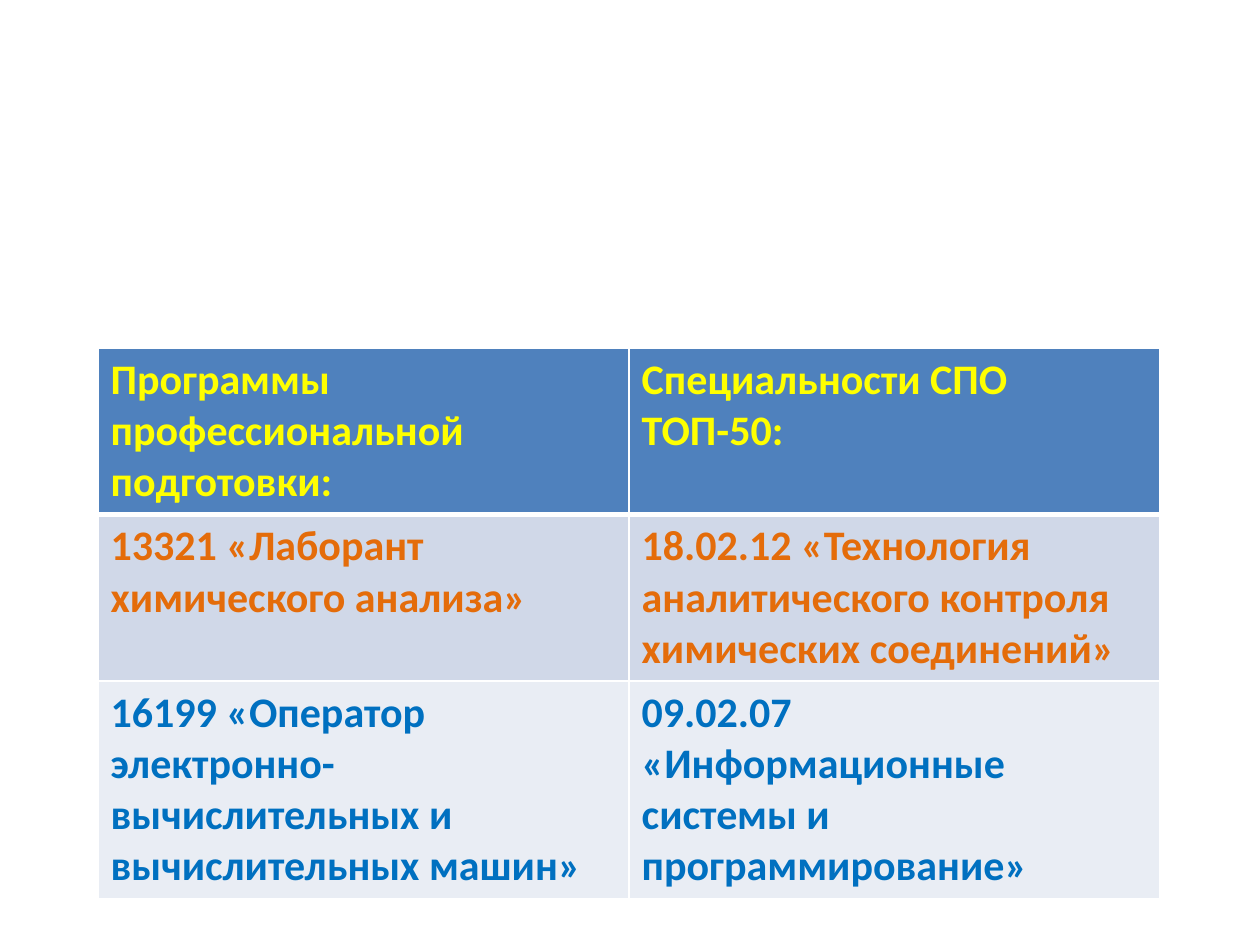
from dataclasses import dataclass

import pptx
import pptx.dml.color
import pptx.oxml
import pptx.oxml.ns
import pptx.util

Pt = pptx.util.Pt


@dataclass
class Theme:
    font: str = "Calibri"
    size: int = 24
    line: str = "FFFFFF"
    fills: tuple = ("4F81BD", "D0D8E8", "E9EDF4")
    inks: tuple = ("FFFF00", "E46C0A", "0070C0")


class Deck:
    """Holds the theme and the current slide, and draws on it."""

    def __init__(self, theme):
        self.theme = theme
        self.show = pptx.Presentation()
        self.show.slide_width, self.show.slide_height = Pt(720), Pt(540)
        self.slide = self.show.slides.add_slide(self.show.slide_layouts[6])

    def color(self, code):
        return pptx.dml.color.RGBColor.from_string(code)

    def edge(self, cell, side, width):
        cell._tc.get_or_add_tcPr().append(pptx.oxml.parse_xml(
            f'<a:ln{side} {pptx.oxml.ns.nsdecls("a")} w="{Pt(width)}">'
            f'<a:solidFill><a:srgbClr val="{self.theme.line}"/></a:solidFill>'
            f'</a:ln{side}>'))

    def cell(self, cell, text, row):
        for side in "LRTB":
            heavy = (row, side) in ((0, "B"), (1, "T"))
            self.edge(cell, side, 3 if heavy else 1)
        cell.fill.solid()
        cell.fill.fore_color.rgb = self.color(self.theme.fills[row])
        cell.text = text
        font = cell.text_frame.paragraphs[0].font
        font.name, font.size = self.theme.font, Pt(self.theme.size)
        font.bold = True
        font.color.rgb = self.color(self.theme.inks[row])

    def table(self, rows, left, top, width, heights):
        count = len(rows[0])
        frame = self.slide.shapes.add_table(
            len(rows), count, Pt(left), Pt(top), Pt(width), Pt(sum(heights)))
        grid = frame.table
        for col in grid.columns:
            col.width = Pt(width / count)
        for row, (texts, height) in enumerate(zip(rows, heights)):
            grid.rows[row].height = Pt(height)
            for col, text in enumerate(texts):
                self.cell(grid.cell(row, col), text, row)


def main():
    deck = Deck(Theme())
    deck.table(
        [("Программы профессиональной подготовки:",
          "Специальности СПО ТОП-50:"),
         ("13321 «Лаборант химического анализа»",
          "18.02.12 «Технология аналитического контроля химических соединений»"),
         ("16199 «Оператор электронно-вычислительных и вычислительных машин»",
          "09.02.07 «Информационные системы и программирование»")],
        left=56, top=199, width=607, heights=(94, 95, 124))
    deck.show.save("out.pptx")


if __name__ == "__main__":
    main()
